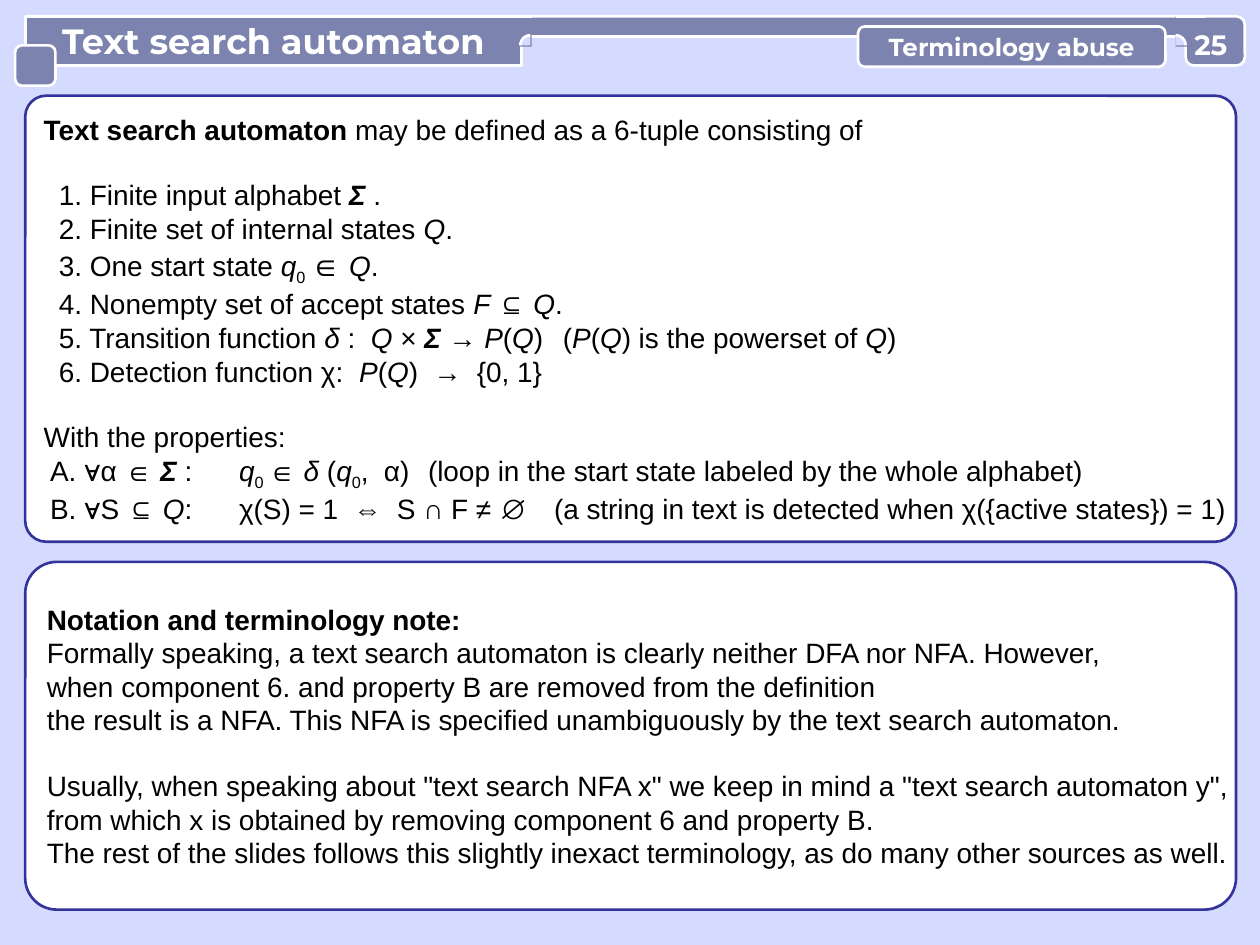
"""Build the slide that defines a text search automaton."""
import math

from lxml import etree
from pptx import Presentation
from pptx import util as u
from pptx.dml.color import RGBColor
from pptx.enum import shapes, text
from pptx.oxml import ns

PALE = RGBColor(0xD5, 0xDA, 0xFF)
SLATE = RGBColor(0x7D, 0x83, 0xAF)
NAVY = RGBColor(0x33, 0x33, 0x99)
WHITE = RGBColor(0xFF, 0xFF, 0xFF)
BLACK = RGBColor(0, 0, 0)

Q, P, SMALL_Q, ZERO = ("Q", "i"), ("P", "i"), ("q", "i"), ("0", "s")
SIGMA = ("Σ ", "bi")
ITEM = {"indent": 0.12}
PROPERTY = {"indent": 0.05, "tabs": (1.32, 3.8)}
GAP = {"before": 18.4}

DEFINITION = [
    ([("Text search automaton", "b"), " may be defined as a 6-tuple consisting of"], {}),
    (["1. Finite input alphabet ", SIGMA, "."], ITEM | GAP),
    (["2. Finite set of internal states ", Q, "."], ITEM),
    (["3. One start state ", SMALL_Q, ("0 ", "s"), ("∈", "x"), " ", Q, "."], ITEM),
    (["4. Nonempty set of accept states ", ("F ", "i"), "⊆ ", Q, "."], ITEM),
    (["5. Transition function ", ("δ ", "i"), ":  ", ("Q ", "i"), "× ", ("Σ", "bi"), " → ",
      P, "(", Q, ")\t(", P, "(", Q, ") is the powerset of ", Q, ")"], ITEM | {"tabs": (4.22,)}),
    (["6. Detection function χ:  ", P, "(", Q, ")  →  {0, 1}"], ITEM),
    (["With the properties:"], GAP),
    (["A. ∀α ∈ ", SIGMA, ":\t", SMALL_Q, ("0 ", "s"), "∈ ", ("δ", "i"), " (", SMALL_Q, ZERO,
      ",  α)\t(loop in the start state labeled by the whole alphabet)"], PROPERTY),
    (["B. ∀S ⊆ ", Q, ":\tχ(S) = 1  ⇔  S ∩ F ≠ ∅\t"
      "(a string in text is detected when χ({active states}) = 1)"], PROPERTY),
]
NOTE = [
    ([("Notation and terminology note:", "b")], {}),
    (["Formally speaking, a text search automaton is clearly neither DFA nor NFA. However,"], {}),
    (["when component 6. and property B are removed from the definition"], {}),
    (["the result is a NFA. This NFA is specified unambiguously by the text search automaton."], {}),
    (['Usually, when speaking about "text search NFA x" we keep in mind a '
      '"text search automaton y",'], GAP),
    (["from which x is obtained by removing component 6 and property B."], {}),
    (["The rest of the slides follows this slightly inexact terminology, "
      "as do many other sources as well."], {}),
]


def write(box, lines, size=16, font="Arial", color=BLACK, align=text.PP_ALIGN.LEFT):
    frame = box.text_frame
    frame.word_wrap = False
    frame.auto_size = text.MSO_AUTO_SIZE.NONE
    frame.vertical_anchor = text.MSO_ANCHOR.MIDDLE
    for index, (spans, layout) in enumerate(lines):
        para = frame.add_paragraph() if index else frame.paragraphs[0]
        para.alignment = align
        para.line_spacing = 1.0
        para.space_before = u.Pt(layout.get("before", 0))
        properties = para._p.get_or_add_pPr()
        properties.set("marL", str(u.Inches(layout.get("indent", 0))))
        properties.set("indent", "0")
        if "tabs" in layout:
            stops = etree.SubElement(properties, ns.qn("a:tabLst"))
            for stop in layout["tabs"]:
                etree.SubElement(stops, ns.qn("a:tab"), pos=str(u.Inches(stop)), algn="l")
        for item in spans:
            words, style = (item, "") if isinstance(item, str) else item
            span = para.add_run()
            span.text = words
            span.font.name = font
            span.font.size = u.Pt(18 if "x" in style else size)
            span.font.bold = "b" in style
            span.font.italic = "i" in style
            span.font.color.rgb = color
            if "s" in style:
                span._r.get_or_add_rPr().set("baseline", "-25000")


def paint(shape, fill, line):
    if fill is None:
        shape.fill.background()
    else:
        shape.fill.solid()
        shape.fill.fore_color.rgb = fill
    if line is None:
        shape.line.fill.background()
    else:
        shape.line.color.rgb = line
        shape.line.width = u.Pt(1.5)


def add_box(slide, place, radius=None, fill=SLATE, line=WHITE):
    kind = shapes.MSO_SHAPE.RECTANGLE if radius is None else shapes.MSO_SHAPE.ROUNDED_RECTANGLE
    box = slide.shapes.add_shape(kind, *map(u.Inches, place))
    if radius is not None:
        box.adjustments[0] = radius
    box.shadow.inherit = False
    paint(box, fill, line)
    return box


def add_outline(slide, points, closed, fill, line):
    start, *rest = [(u.Inches(x), u.Inches(y)) for x, y in points]
    builder = slide.shapes.build_freeform(*start, scale=1.0)
    builder.add_line_segments(rest, close=closed)
    outline = builder.convert_to_shape()
    outline.shadow.inherit = False
    paint(outline, fill, line)


def add_joint(slide, left, edge, center, side):
    add_box(slide, (left, 0.13, 0.24, 0.24), line=None)
    top = slide.shapes.add_connector(
        shapes.MSO_CONNECTOR.STRAIGHT, *map(u.Inches, (edge, 0.13, edge - side * 0.24, 0.13)))
    top.line.color.rgb = WHITE
    top.line.width = u.Pt(1.5)
    etree.SubElement(top._element.spPr, ns.qn("a:effectLst"))
    angles = [math.pi / 2 * step / 12 for step in range(13)]
    arc = [(center + side * 0.08 * math.sin(a), 0.36 - 0.08 * math.cos(a)) for a in angles]
    add_outline(slide, arc + [(center, 0.36)], True, PALE, None)
    add_outline(slide, arc, False, None, WHITE)


def shape_title(title):
    title.left, title.top, title.width, title.height = map(u.Inches, (0.2, 0.13, 3.94, 0.39))
    geometry = etree.SubElement(title._element.spPr, ns.qn("a:prstGeom"), prst="roundRect")
    guides = etree.SubElement(geometry, ns.qn("a:avLst"))
    etree.SubElement(guides, ns.qn("a:gd"), name="adj", fmla="val 18800")
    paint(title, SLATE, WHITE)


def main():
    deck = Presentation()
    deck.slide_width, deck.slide_height = u.Inches(10), u.Inches(7.5)
    slide = deck.slides.add_slide(deck.slide_layouts[5])
    slide.background.fill.solid()
    slide.background.fill.fore_color.rgb = PALE
    heading = {"font": "Montserrat", "color": WHITE}
    center = text.PP_ALIGN.CENTER

    title = slide.shapes.title
    shape_title(title)
    write(title, [([("Text search automaton", "b")], {})], size=20, align=center, **heading)

    definition = add_box(slide, (0.2, 0.76, 9.61, 3.54), 0.047, WHITE, NAVY)
    write(definition, DEFINITION)

    add_box(slide, (4.06, 0.13, 5.43, 0.16), 0.5)
    add_joint(slide, 3.98, 3.98, 4.21, -1)
    add_box(slide, (0.12, 0.36, 0.32, 0.32), 0.17)
    add_box(slide, (9.41, 0.13, 0.47, 0.39), 0.17)
    add_joint(slide, 9.33, 9.57, 9.33, 1)

    topic = add_box(slide, (6.81, 0.21, 2.44, 0.32), 0.17)
    write(topic, [([("Terminology abuse", "b")], {})], size=14, align=center, **heading)

    number = slide.shapes.add_textbox(*map(u.Inches, (9.41, 0.22, 0.4, 0.27)))
    frame = number.text_frame
    frame.margin_left = frame.margin_right = frame.margin_top = frame.margin_bottom = 0
    write(number, [([("25", "b")], {})], **heading)
    frame.word_wrap = True
    frame.paragraphs[0].alignment = center

    note = add_box(slide, (0.2, 4.46, 9.61, 2.76), 0.091, WHITE, NAVY)
    write(note, NOTE)
    deck.save("out.pptx")


if __name__ == "__main__":
    main()
